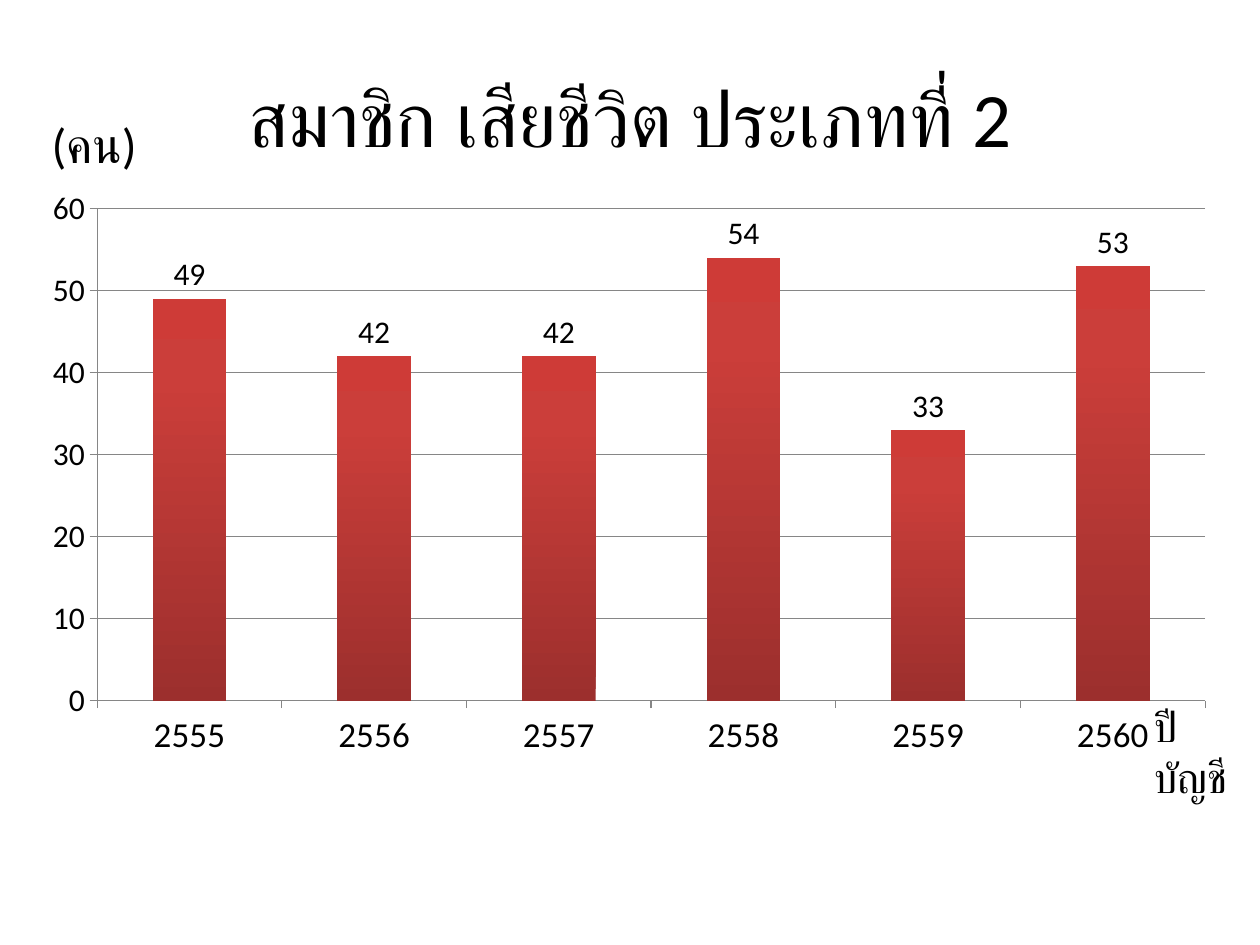
import copy

import pptx
import pptx.chart.data
import pptx.dml.color
import pptx.enum.chart
import pptx.enum.text
import pptx.oxml.ns
import pptx.util
from pptx.util import Cm

FONT = "Calibri"
BLACK = "000000"
GRID_GREY = "868686"
BAR_STOPS = [(0, "9C2F2D"), (0.8, "CB3E3A"), (1, "CE3B37")]
DEATHS = {"2555": 49, "2556": 42, "2557": 42, "2558": 54, "2559": 33, "2560": 53}


def rgb(value):
    return pptx.dml.color.RGBColor.from_string(value)


def set_attrs(obj, values):
    for name, value in values.items():
        setattr(obj, name, value)


def style_font(font, size):
    set_attrs(font, {"name": FONT, "size": pptx.util.Pt(size)})
    font.color.rgb = rgb(BLACK)


def add_label(slide, box, text, size, **formats):
    """Place one line of text in the box, with optional paragraph formats."""
    sp = slide.shapes.add_textbox(*box)
    tf = sp.text_frame
    tf.word_wrap = True
    p = tf.paragraphs[0]
    set_attrs(p, formats)
    r = p.add_run()
    r.text = text
    style_font(r.font, size)
    return tf


def add_title(slide, box):
    tf = add_label(slide, box, "สมาชิก เสียชีวิต ประเภทที่ 2", 44,
                   alignment=pptx.enum.text.PP_ALIGN.CENTER)
    tf.vertical_anchor = pptx.enum.text.MSO_ANCHOR.MIDDLE


def fill_gradient(fill, stops):
    """Fill from bottom to top with any number of stops."""
    fill.gradient()
    fill.gradient_angle = 90
    gs_lst = fill._xPr.find(".//" + pptx.oxml.ns.qn("a:gsLst"))
    while len(gs_lst) < len(stops):
        gs_lst.append(copy.deepcopy(gs_lst[0]))
    for stop, (position, color) in zip(fill.gradient_stops, stops):
        stop.position = position
        stop.color.rgb = rgb(color)


def add_deaths_chart(slide, box):
    data = pptx.chart.data.CategoryChartData()
    data.categories = list(DEATHS)
    data.add_series("Series 1", DEATHS.values())
    chart = slide.shapes.add_chart(
        pptx.enum.chart.XL_CHART_TYPE.COLUMN_CLUSTERED, *box, data).chart
    set_attrs(chart, {"has_legend": False, "has_title": False})
    style_font(chart.font, 10)

    # Axes and gridlines
    value_axis = chart.value_axis
    set_attrs(value_axis, {"minimum_scale": 0, "maximum_scale": 60,
                           "major_unit": 10, "has_major_gridlines": True})
    for axis, size in ((chart.category_axis, 20), (value_axis, 18)):
        axis.major_tick_mark = pptx.enum.chart.XL_TICK_MARK.OUTSIDE
        style_font(axis.tick_labels.font, size)
    for part in (chart.category_axis, value_axis, value_axis.major_gridlines):
        part.format.line.color.rgb = rgb(GRID_GREY)
        part.format.line.width = pptx.util.Pt(0.75)

    # Columns and their values
    plot = chart.plots[0]
    set_attrs(plot, {"gap_width": 150, "vary_by_categories": False,
                     "has_data_labels": True})
    set_attrs(plot.data_labels, {
        "show_value": True,
        "position": pptx.enum.chart.XL_LABEL_POSITION.OUTSIDE_END})
    style_font(plot.data_labels.font, 18)
    fill_gradient(plot.series[0].format.fill, BAR_STOPS)


def build_chart_slide(prs):
    slide = prs.slides.add_slide(prs.slide_layouts[6])
    add_title(slide, (Cm(1.27), Cm(0.76), Cm(22.86), Cm(3.18)))
    add_deaths_chart(slide, (Cm(0.58), Cm(3.58), Cm(24.2), Cm(11.91)))
    # Axis names
    add_label(slide, (Cm(23.01), Cm(14), Cm(2.39), Cm(1.27)), "ปีบัญชี", 24)
    add_label(slide, (Cm(0.79), Cm(2.18), Cm(3.76), Cm(1.45)), "(คน)", 28)


def main():
    prs = pptx.Presentation()
    set_attrs(prs, {"slide_width": Cm(25.4), "slide_height": Cm(19.05)})
    build_chart_slide(prs)
    prs.save("out.pptx")


if __name__ == "__main__":
    main()
